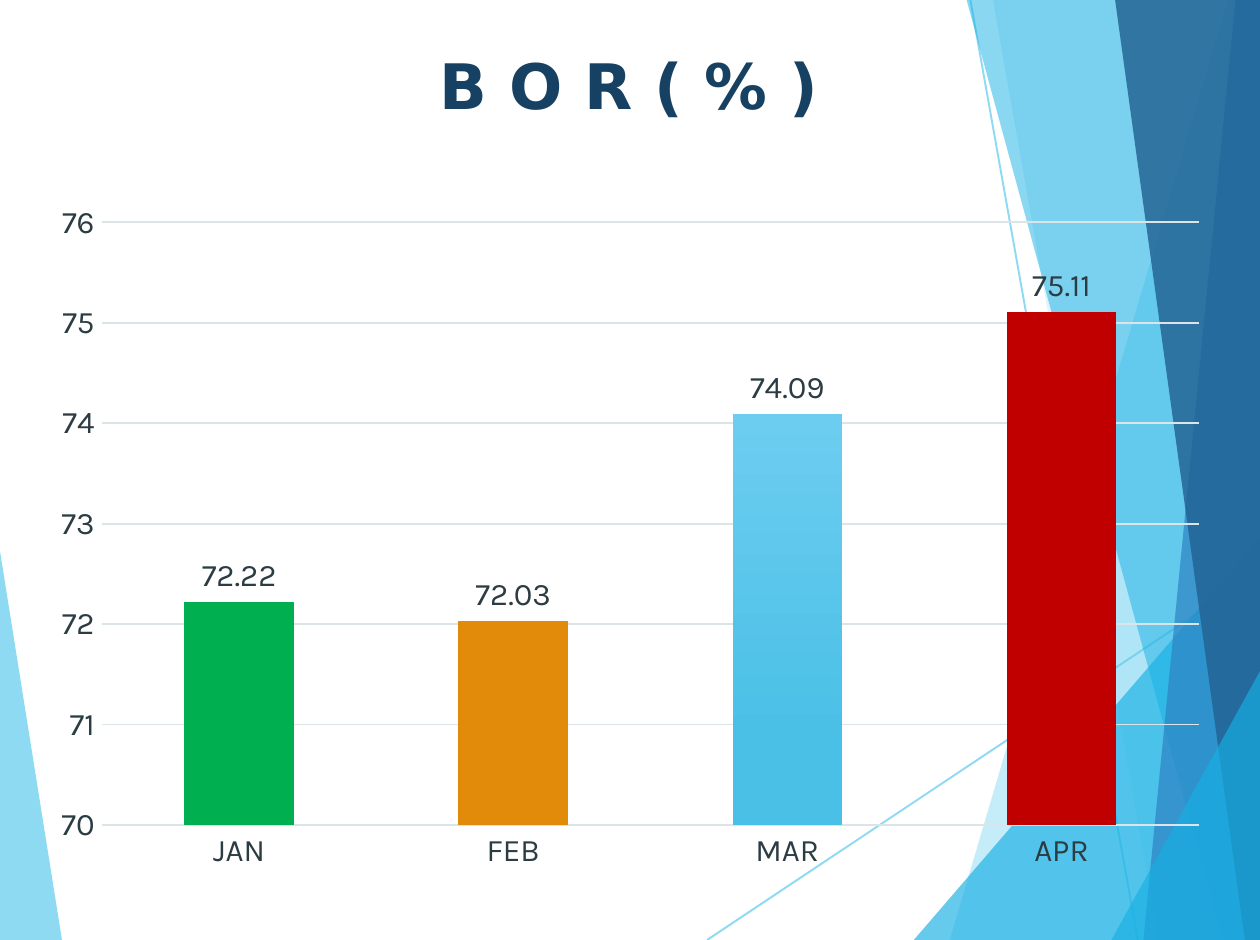
import pptx
import pptx.chart.data
import pptx.dml.color
import pptx.enum.chart
import pptx.enum.shapes
import pptx.enum.text
import pptx.oxml
import pptx.oxml.ns
import pptx.util

PX = 9144  # EMU per px, 100 px to the inch
WIDTH, HEIGHT = 670, 500
COLORS = {
    "sky": "5FCBEF", "cyan": "17B0E4", "blue": "2E83C3", "navy": "226292",
    "title": "174162", "label": "2C3C43", "grid": "DBE4E7",
    "bar_top": "6CCDF0", "bar_bottom": "4BC0E6",
    "green": "00B050", "orange": "E28B0A", "red": "C00000",
}


def rgb(name):
    return pptx.dml.color.RGBColor.from_string(COLORS[name])


def set_opacity(shape, percent):
    """Make the one colour of a shape or line partly transparent."""
    color = shape.element.spPr.xpath(".//a:srgbClr")[0]
    alpha = pptx.oxml.parse_xml(
        f'<a:alpha {pptx.oxml.ns.nsdecls("a")} val="{percent * 1000}"/>')
    color.append(alpha)


deck = pptx.Presentation()
deck.slide_width, deck.slide_height = WIDTH * PX, HEIGHT * PX
page = deck.slides.add_slide(deck.slide_layouts[5])

# Background facets, from back to front
rays = [(376, 500, 670, 304), (516, 0, 605, 500)]
facets = [
    ("sky", 70, [(0, 293), (33, 500), (0, 500)]),
    ("sky", 36, [(653, 0), (505, 500), (670, 500), (670, 0)]),
    ("sky", 20, [(528, 0), (616, 500), (670, 500), (670, 0)]),
    ("cyan", 66, [(486, 500), (670, 286), (670, 500)]),
    ("cyan", 50, [(514, 0), (650, 500), (670, 500), (670, 0)]),
    ("blue", 70, [(657, 0), (608, 500), (670, 500), (670, 0)]),
    ("navy", 82, [(593, 0), (662, 500), (670, 500), (670, 0)]),
    ("cyan", 66, [(591, 500), (670, 357), (670, 500)]),
]
for ends in rays:
    ray = page.shapes.add_connector(
        pptx.enum.shapes.MSO_CONNECTOR.STRAIGHT, *(end * PX for end in ends))
    ray.line.color.rgb = rgb("sky")
    ray.line.width = pptx.util.Pt(0.75)
    set_opacity(ray, 70)
    ray.element.spPr.append(
        pptx.oxml.parse_xml(f'<a:effectLst {pptx.oxml.ns.nsdecls("a")}/>'))
for color, opacity, corners in facets:
    outline = page.shapes.build_freeform(*corners[0], scale=PX)
    outline.add_line_segments(corners[1:], close=True)
    facet = outline.convert_to_shape()
    facet.shadow.inherit = False
    facet.fill.solid()
    facet.fill.fore_color.rgb = rgb(color)
    facet.line.fill.background()
    set_opacity(facet, opacity)

# Title, brought in front of the facets
title = page.shapes.title
title.element.getparent().append(title.element)
title.left, title.top, title.width, title.height = (
    length * PX for length in (33, 20, 603, 83))
title.text_frame.vertical_anchor = pptx.enum.text.MSO_ANCHOR.TOP
para = title.text_frame.paragraphs[0]
para.alignment = pptx.enum.text.PP_ALIGN.CENTER
span = para.add_run()
span.text = "B O R ( % )"
span.font.name = "DejaVu Sans"
span.font.size = pptx.util.Pt(24)
span.font.bold = True
span.font.color.rgb = rgb("title")

# Column chart
data = pptx.chart.data.CategoryChartData()
data.categories = ["JAN", "FEB", "MAR", "APR"]
data.add_series("Series 1", [72.22, 72.03, 74.09, 75.11])
chart = page.shapes.add_chart(
    pptx.enum.chart.XL_CHART_TYPE.COLUMN_CLUSTERED,
    *(length * PX for length in (20, 101, 630, 369)), data).chart
chart.has_title = False
chart.has_legend = False
chart.font.name = "Karla"
chart.font.size = pptx.util.Pt(10)

months, rates = chart.category_axis, chart.value_axis
rates.minimum_scale, rates.maximum_scale, rates.major_unit = 70, 76, 1
rates.has_major_gridlines = True
rates.format.line.fill.background()
for line in (months.format.line, rates.major_gridlines.format.line):
    line.color.rgb = rgb("grid")
    line.width = pptx.util.Pt(0.75)
for axis in (months, rates):
    axis.major_tick_mark = pptx.enum.chart.XL_TICK_MARK.NONE
    axis.minor_tick_mark = pptx.enum.chart.XL_TICK_MARK.NONE

plot = chart.plots[0]
plot.gap_width = 150
plot.vary_by_categories = False
plot.has_data_labels = True
labels = plot.data_labels
labels.show_value = True
labels.position = pptx.enum.chart.XL_LABEL_POSITION.OUTSIDE_END
for font in (months.tick_labels.font, rates.tick_labels.font, labels.font):
    font.name = "Karla"
    font.size = pptx.util.Pt(12)
    font.color.rgb = rgb("label")

bars = plot.series[0]
bars.format.line.fill.background()
bars.format.fill.gradient()
bars.format.fill.gradient_angle = 270
stops = bars.format.fill.gradient_stops
for stop, color, position in zip(stops, ("bar_top", "bar_bottom"), (0, 0.78)):
    stop.color.rgb = rgb(color)
    stop.position = position
for index, color in ((0, "green"), (1, "orange"), (3, "red")):
    bar = bars.points[index].format
    bar.fill.solid()
    bar.fill.fore_color.rgb = rgb(color)
    bar.line.fill.background()

deck.save("out.pptx")
